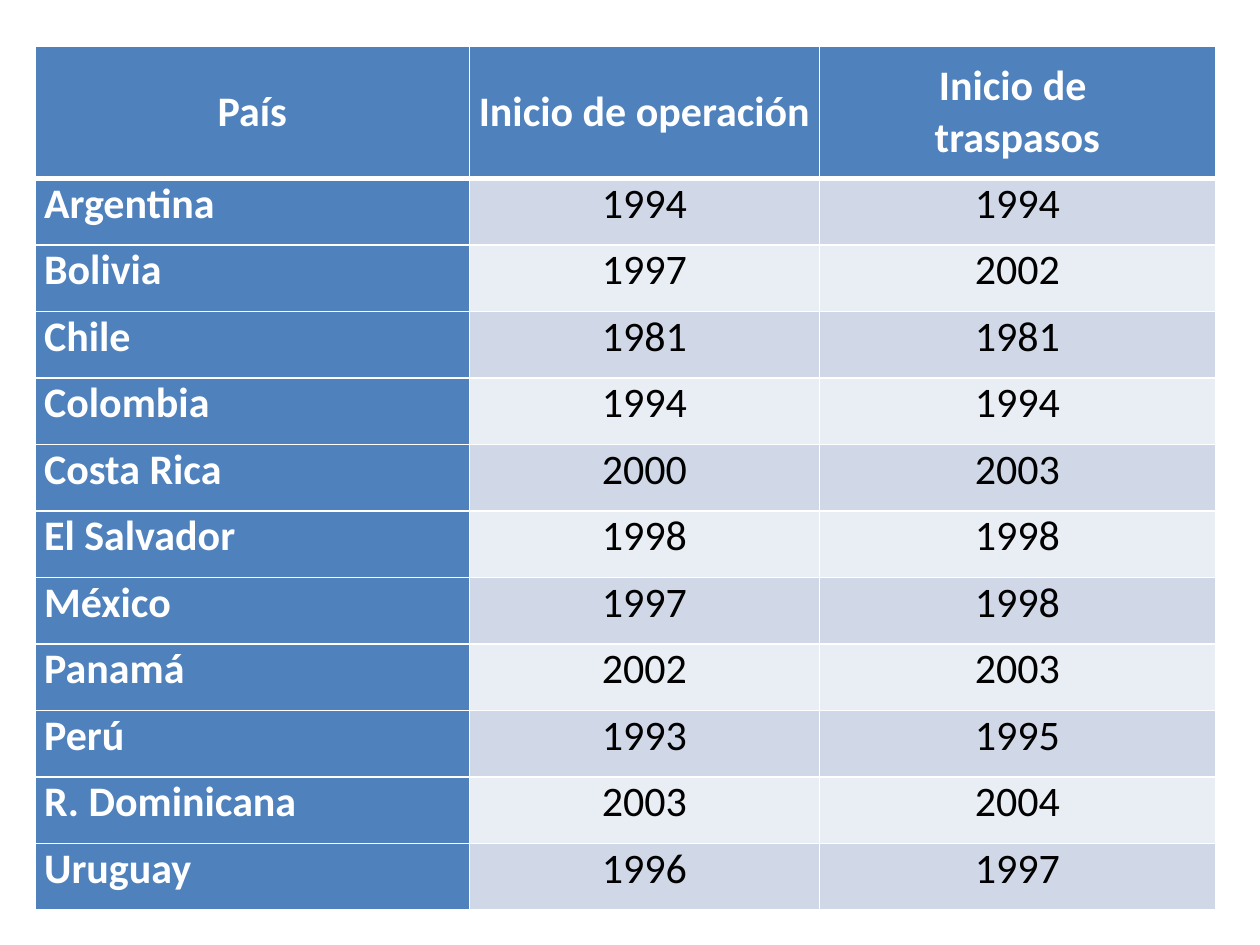
from dataclasses import dataclass

from lxml import etree
from pptx import Presentation
from pptx.dml.color import RGBColor
from pptx.enum.text import MSO_ANCHOR, PP_ALIGN
from pptx.oxml.ns import qn
from pptx.util import Cm, Pt

CENTER, JUSTIFY = PP_ALIGN.CENTER, PP_ALIGN.JUSTIFY
TOP, MIDDLE = MSO_ANCHOR.TOP, MSO_ANCHOR.MIDDLE
BLANK = 6


@dataclass(frozen=True)
class Theme:
    font: str = "Calibri"
    size: int = 24
    blue: str = "4F81BD"
    bands: tuple = ("D0D8E8", "E9EDF4")
    light: str = "FFFFFF"
    dark: str = "000000"
    thin: int = 1
    thick: int = 3


THEME = Theme()

HEADS = ("País", "Inicio de operación", "Inicio de \ntraspasos")
FUNDS = (
    ("Argentina", 1994, 1994),
    ("Bolivia", 1997, 2002),
    ("Chile", 1981, 1981),
    ("Colombia", 1994, 1994),
    ("Costa Rica", 2000, 2003),
    ("El Salvador", 1998, 1998),
    ("México", 1997, 1998),
    ("Panamá", 2002, 2003),
    ("Perú", 1993, 1995),
    ("R. Dominicana", 2003, 2004),
    ("Uruguay", 1996, 1997),
)
WIDTHS = (Cm(8.75), Cm(7.06), Cm(7.98))
HEAD_H, ROW_H = Cm(2.67), Cm(1.34)


def add_edge(cell, side, width):
    props = cell._tc.get_or_add_tcPr()
    line = etree.SubElement(props, qn(f"a:ln{side}"), w=str(Pt(width)))
    fill = etree.SubElement(line, qn("a:solidFill"))
    etree.SubElement(fill, qn("a:srgbClr"), val=THEME.light)


def style_cell(cell, fill, top, bottom):
    """Set edges before the fill, as the schema orders them."""
    for side, width in zip("LRTB", (THEME.thin, THEME.thin, top, bottom)):
        add_edge(cell, side, width)
    cell.fill.solid()
    cell.fill.fore_color.rgb = RGBColor.from_string(fill)
    cell.margin_left = cell.margin_right = Cm(0.18)
    cell.margin_top = cell.margin_bottom = 0


def write(cell, text, color, bold, align, anchor):
    cell.vertical_anchor = anchor
    frame = cell.text_frame
    for i, part in enumerate(text.split("\n")):
        para = frame.add_paragraph() if i else frame.paragraphs[0]
        para.alignment = align
        run = para.add_run()
        run.text = part
        run.font.name = THEME.font
        run.font.size = Pt(THEME.size)
        run.font.bold = bold
        run.font.color.rgb = RGBColor.from_string(color)


def fill_head(table):
    for cell, text in zip(table.rows[0].cells, HEADS):
        style_cell(cell, THEME.blue, THEME.thin, THEME.thick)
        write(cell, text, THEME.light, True, CENTER, MIDDLE)


def fill_row(table, index, values):
    top = THEME.thick if index == 1 else THEME.thin
    band = THEME.bands[(index - 1) % 2]
    for col, value in enumerate(values):
        cell = table.cell(index, col)
        is_name = col == 0
        style_cell(cell, THEME.blue if is_name else band, top, THEME.thin)
        write(cell, str(value), THEME.light if is_name else THEME.dark,
              is_name, JUSTIFY if is_name else CENTER, TOP)


def add_grid(slide):
    count = len(FUNDS)
    frame = slide.shapes.add_table(
        count + 1, len(HEADS), Cm(0.71), Cm(0.93),
        sum(WIDTHS), HEAD_H + count * ROW_H)
    table = frame.table
    for col, width in zip(table.columns, WIDTHS):
        col.width = width
    for i, row in enumerate(table.rows):
        row.height = ROW_H if i else HEAD_H
    table.first_col = True
    return table


def main():
    deck = Presentation()
    deck.slide_width, deck.slide_height = Cm(25.4), Cm(19.05)
    slide = deck.slides.add_slide(deck.slide_layouts[BLANK])
    table = add_grid(slide)
    fill_head(table)
    for i, values in enumerate(FUNDS, start=1):
        fill_row(table, i, values)
    deck.save("out.pptx")


if __name__ == "__main__":
    main()
